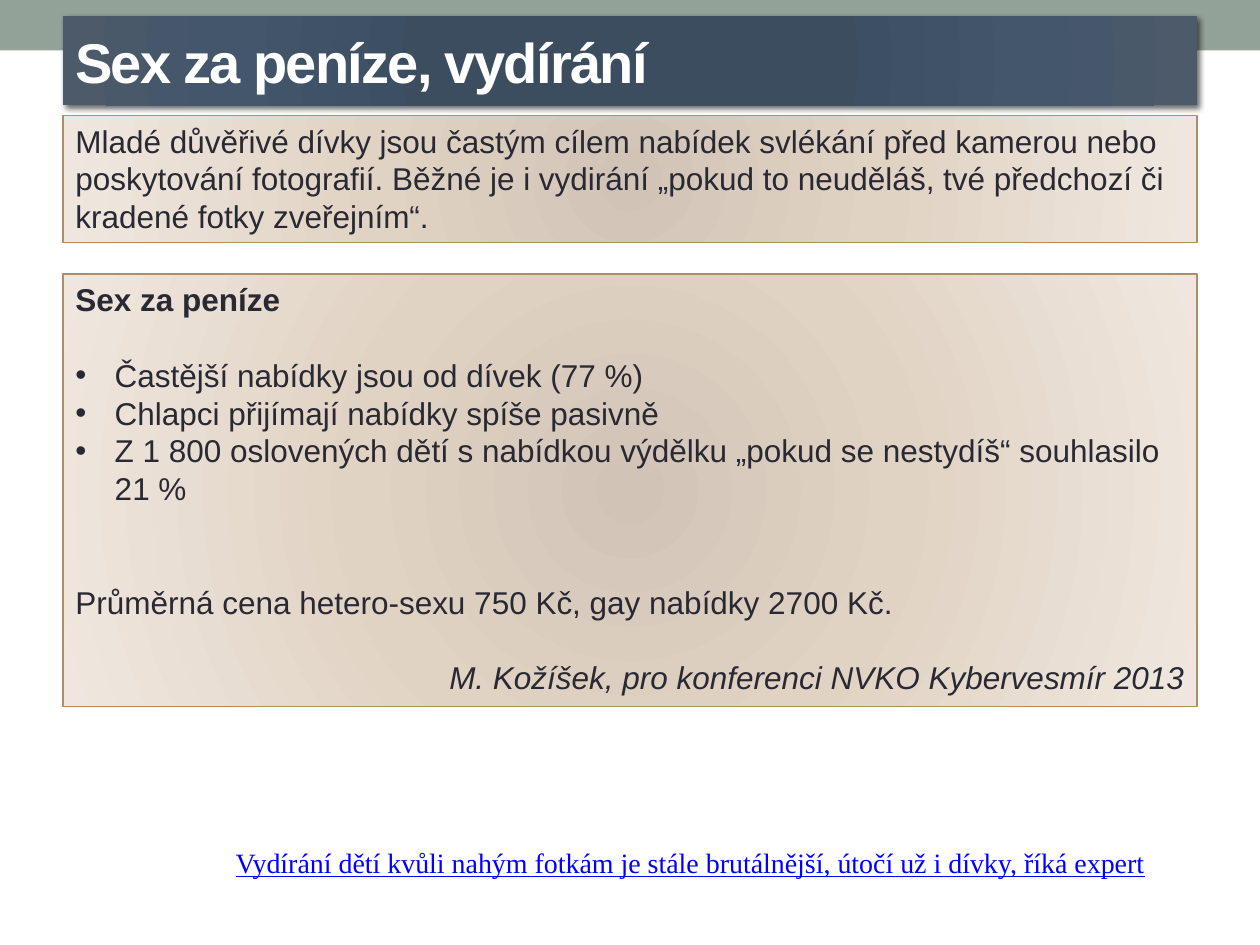
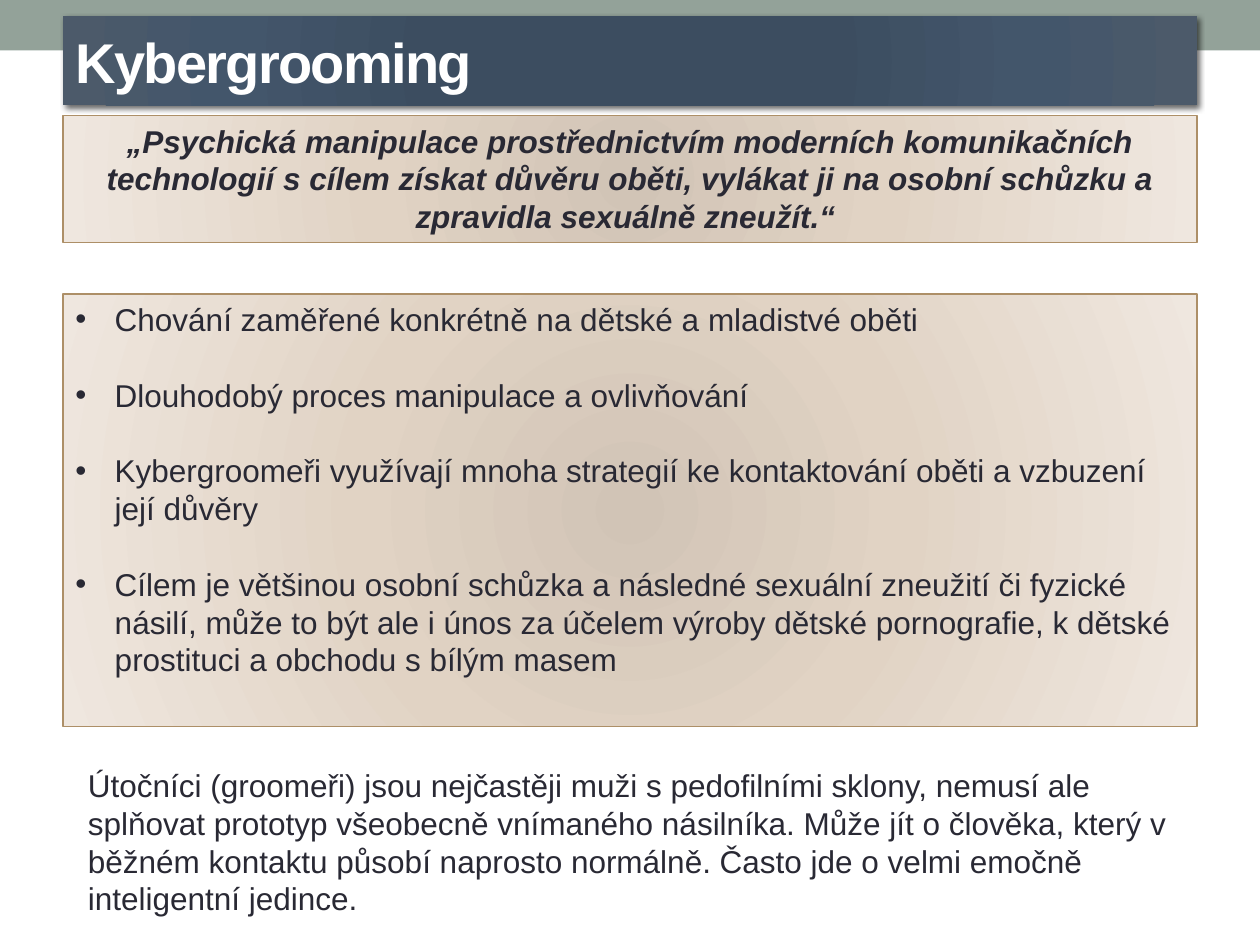
from lxml import etree
from pptx import Presentation, util as u
from pptx.dml import color as dml
from pptx.enum import shapes, text
from pptx.oxml import ns, parse_xml

C = {"band": "93A299", "ink": "292934", "white": "FFFFFF", "edge": "AD8F67", "link": "0000FF", "shadow": "000000"}
TITLE_STOPS = [(0, "3B4D61"), (34, "3C4D60"), (70, "43566B"), (100, "4C5A6A")]
PANEL_STOPS = [(0, "D1C4B6"), (45, "E1D3C4"), (100, "EFE7DF")]
A = ns.nsdecls("a")
LEFT, WIDTH = 36, 648
INDENT = 22.5
LINE = 21.6
ALIGN = {"l": text.PP_ALIGN.LEFT, "c": text.PP_ALIGN.CENTER, "r": text.PP_ALIGN.RIGHT}


def rgb(name):
    """Return the palette colour called name."""
    return dml.RGBColor.from_string(C[name])


def add_rect(s, left, top, width, height):
    """Add a rectangle without line or inherited shadow."""
    sp = s.shapes.add_shape(shapes.MSO_SHAPE.RECTANGLE, u.Pt(left), u.Pt(top), u.Pt(width), u.Pt(height))
    sp.shadow.inherit = False
    sp.line.fill.background()
    return sp


def radial_fill(sp, stops):
    """Fill a shape with a gradient that runs from its centre outwards."""
    gs = "".join(f'<a:gs pos="{pos * 1000}"><a:srgbClr val="{hex_}"/></a:gs>' for pos, hex_ in stops)
    sp._element.spPr.find(ns.qn("a:prstGeom")).addnext(parse_xml(
        f'<a:gradFill {A} rotWithShape="1"><a:gsLst>{gs}</a:gsLst><a:path path="circle">'
        '<a:fillToRect l="100000" t="100000" r="100000" b="100000"/></a:path></a:gradFill>'))


def drop_shadow(sp):
    """Give a shape a soft shadow towards the lower right."""
    effects = sp._element.spPr.find(ns.qn("a:effectLst"))
    effects.append(parse_xml(
        f'<a:outerShdw {A} blurRad="{u.Pt(3)}" dist="{u.Pt(2)}" dir="2700000" rotWithShape="0">'
        f'<a:srgbClr val="{C["shadow"]}"><a:alpha val="60000"/></a:srgbClr></a:outerShdw>'))


def add_par(tf, words, size=18, font="Arial", color="ink", bold=False, italic=False,
            underline=False, align="l", bullet=False, before=0, spacing=0):
    """Write one formatted paragraph into a text frame."""
    p = tf.paragraphs[0]
    if p.runs:
        p = tf.add_paragraph()
    p.alignment = ALIGN[align]
    p.space_before = u.Pt(before)
    r = p.add_run()
    r.text = words
    f = r.font
    f.size, f.name, f.bold, f.italic, f.underline = u.Pt(size), font, bold, italic, underline
    f.color.rgb = rgb(color)
    if spacing:
        r._r.get_or_add_rPr().set("spc", str(spacing * 100))
    if bullet:
        pPr = p._p.get_or_add_pPr()
        pPr.set("marL", str(u.Pt(INDENT)))
        pPr.set("indent", str(-u.Pt(INDENT)))
        etree.SubElement(pPr, ns.qn("a:buFont"), typeface="Arial")
        etree.SubElement(pPr, ns.qn("a:buChar"), char="•")


def add_panel(s, top, height):
    """Add a beige bordered panel and return its text frame."""
    sp = add_rect(s, LEFT, top, WIDTH, height)
    radial_fill(sp, PANEL_STOPS)
    sp.line.color.rgb = rgb("edge")
    sp.line.width = u.Pt(0.75)
    tf = sp.text_frame
    tf.word_wrap = True
    tf.vertical_anchor = text.MSO_ANCHOR.TOP
    return tf


def add_note(s, left, top, width, height, words, **fmt):
    """Add a wrapped text box with one paragraph."""
    tf = s.shapes.add_textbox(u.Pt(left), u.Pt(top), u.Pt(width), u.Pt(height)).text_frame
    tf.word_wrap = True
    add_par(tf, words, **fmt)


def add_slide(prs, title):
    """Add a slide with the top band and the title bar."""
    s = prs.slides.add_slide(prs.slide_layouts[6])
    band = add_rect(s, 0, 0, 720, 28.8)
    band.fill.solid()
    band.fill.fore_color.rgb = rgb("band")
    bar = add_rect(s, LEFT, 9.2, WIDTH, 51)
    radial_fill(bar, TITLE_STOPS)
    drop_shadow(bar)
    bar.text_frame.vertical_anchor = text.MSO_ANCHOR.MIDDLE
    add_par(bar.text_frame, title, size=32, color="white", bold=True, spacing=-1)
    return s


def money_slide(prs):
    """Build the slide on sex for money and blackmail."""
    s = add_slide(prs, "Sex za peníze, vydírání")
    add_par(add_panel(s, 66, 72.7),
            "Mladé důvěřivé dívky jsou častým cílem nabídek svlékání před kamerou nebo poskytování "
            "fotografií. Běžné je i vydirání „pokud to neuděláš, tvé předchozí či kradené fotky zveřejním“.")
    tf = add_panel(s, 156.6, 247)
    add_par(tf, "Sex za peníze", bold=True)
    offers = ["Častější nabídky jsou od dívek (77 %)",
              "Chlapci přijímají nabídky spíše pasivně",
              "Z 1 800 oslovených dětí s nabídkou výdělku „pokud se nestydíš“ souhlasilo 21 %"]
    for i, offer in enumerate(offers):
        add_par(tf, offer, bullet=True, before=0 if i else LINE)
    add_par(tf, "Průměrná cena hetero-sexu 750 Kč, gay nabídky 2700 Kč.", before=2 * LINE)
    add_par(tf, "M. Kožíšek, pro konferenci NVKO Kybervesmír 2013", italic=True, align="r", before=LINE)
    add_note(s, 127.5, 479.5, 569.5, 26.6,
             "Vydírání dětí kvůli nahým fotkám je stále brutálnější, útočí už i dívky, říká expert",
             size=16, font="Times New Roman", color="link", underline=True)


def grooming_slide(prs):
    """Build the slide on cybergrooming."""
    s = add_slide(prs, "Kybergrooming")
    add_par(add_panel(s, 66, 72.7),
            "„Psychická manipulace prostřednictvím moderních komunikačních technologií s cílem získat "
            "důvěru oběti, vylákat ji na osobní schůzku a zpravidla sexuálně zneužít.“ ",
            bold=True, italic=True, align="c")
    tf = add_panel(s, 168, 247)
    traits = ["Chování zaměřené konkrétně na dětské a mladistvé oběti",
              "Dlouhodobý proces manipulace a ovlivňování",
              "Kybergroomeři využívají mnoha strategií ke kontaktování oběti a vzbuzení její důvěry",
              "Cílem je většinou osobní schůzka a následné sexuální zneužití či fyzické násilí, může to být "
              "ale i únos za účelem výroby dětské pornografie, k dětské prostituci a obchodu s bílým masem"]
    for i, trait in enumerate(traits):
        add_par(tf, trait, bullet=True, before=LINE if i else 0)
    add_note(s, 43.2, 434.2, 633.6, 94.5,
             "Útočníci (groomeři) jsou nejčastěji muži s pedofilními sklony, nemusí ale splňovat prototyp "
             "všeobecně vnímaného násilníka. Může jít o člověka, který v běžném kontaktu působí naprosto "
             "normálně. Často jde o velmi emočně inteligentní jedince.")


def main():
    """Build and save the presentation."""
    prs = Presentation()
    prs.slide_width, prs.slide_height = u.Pt(720), u.Pt(540)
    money_slide(prs)
    grooming_slide(prs)
    prs.save("out.pptx")


if __name__ == "__main__":
    main()
